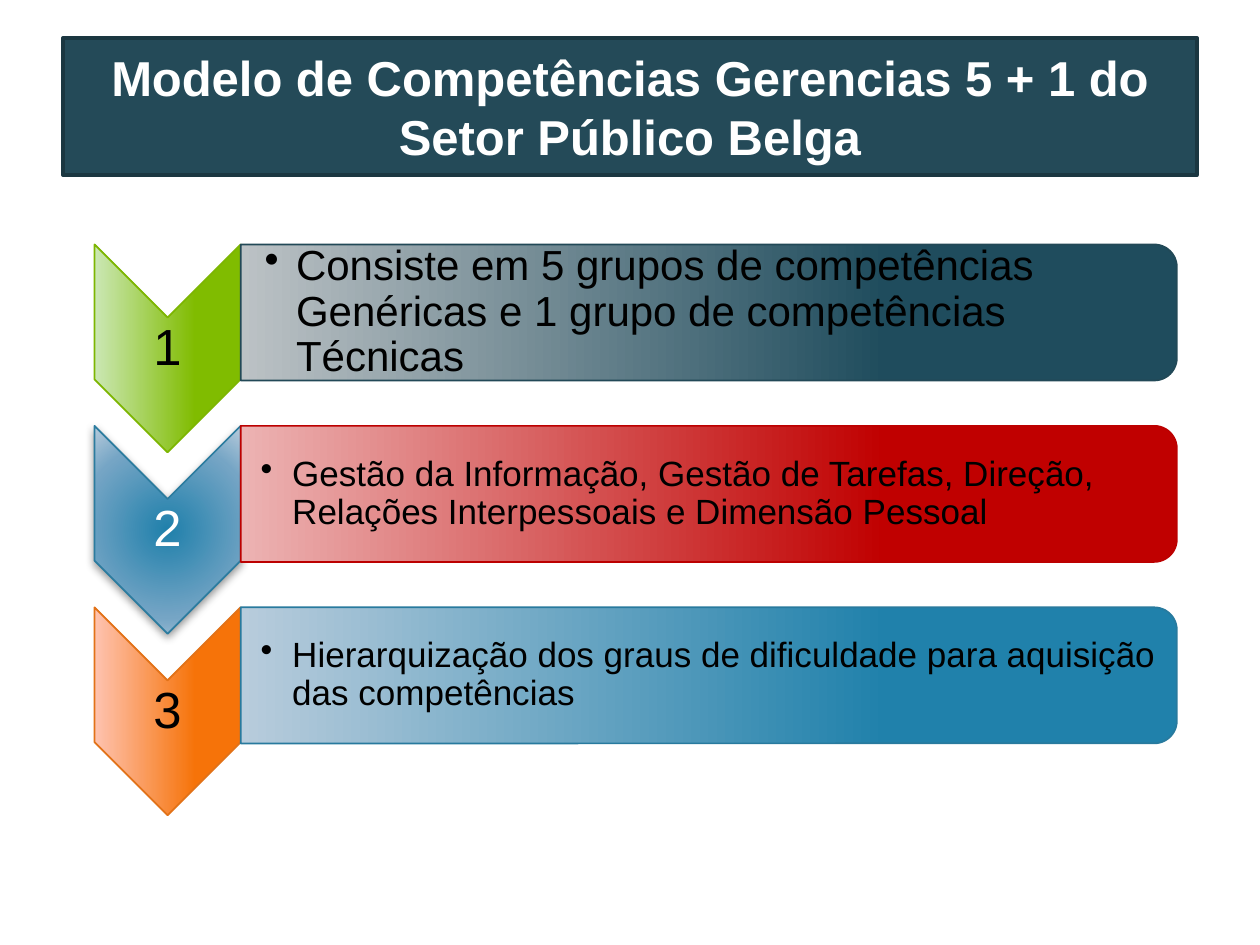
from dataclasses import dataclass

from lxml import etree
from pptx import Presentation
from pptx.dml.color import RGBColor
from pptx.enum.shapes import MSO_SHAPE
from pptx.enum.text import MSO_ANCHOR, PP_ALIGN
from pptx.oxml.ns import qn
from pptx.util import Inches, Pt

RECT = MSO_SHAPE.RECTANGLE
ARROW = MSO_SHAPE.CHEVRON
BAR = MSO_SHAPE.ROUND_2_SAME_RECTANGLE
MIDDLE = MSO_ANCHOR.MIDDLE
CENTER = PP_ALIGN.CENTER
LEFT = PP_ALIGN.LEFT


@dataclass(frozen=True)
class Theme:
    font: str = "Arial"
    head: int = 28
    mark: int = 29
    white: str = "FFFFFF"
    black: str = "000000"
    panel: str = "244A58"
    edge: str = "1B3741"


@dataclass(frozen=True)
class Grid:
    left: float = 0.75
    top: float = 1.94
    step: float = 1.44
    arrow: float = 1.16
    point: float = 1.65
    bar: float = 7.43
    high: float = 1.08


@dataclass(frozen=True)
class Step:
    text: str
    size: int
    inset: float
    ink: str
    arrow: tuple
    rim: str
    bar: tuple
    edge: str
    glow: bool = False


THEME = Theme()
GRID = Grid()
STEPS = [
    Step("Consiste em 5 grupos de competências Genéricas e 1 grupo de competências Técnicas",
         24, 0.19, THEME.black, ((31, "80BC00"), (100, "CBE7B4")), "7DB602",
         ((31, "1F4C5D"), (100, "BCC2C5")), "224957"),
    Step("Gestão da Informação, Gestão de Tarefas, Direção, "
         "Relações Interpessoais e Dimensão Pessoal",
         20, 0.16, THEME.white, ((0, "2080AB"), (69, "75A5C5"), (100, "B8CCDC")), "2C7C9F",
         ((31, "C00000"), (100, "ECB3B3")), "BC0000", True),
    Step("Hierarquização dos graus de dificuldade para aquisição das competências",
         20, 0.16, THEME.black, ((31, "F67309"), (100, "FEC3B0")), "E27218",
         ((31, "2081AB"), (100, "B8CCDC")), "287A9E"),
]


def node(parent, tag, **attrs):
    return etree.SubElement(parent, qn(tag), {k: str(v) for k, v in attrs.items()})


def shade(shape, stops, radial):
    shape.fill.gradient()
    grad = shape._element.spPr.find(qn("a:gradFill"))
    for child in list(grad):
        grad.remove(child)
    grad.set("rotWithShape", "1")
    row = node(grad, "a:gsLst")
    for place, color in stops:
        node(node(row, "a:gs", pos=place * 1000), "a:srgbClr", val=color)
    if radial:
        full = dict.fromkeys("ltrb", 100000)
        node(node(grad, "a:path", path="circle"), "a:fillToRect", **full)
    else:
        node(grad, "a:lin", ang=90 * 60000, scaled=0)


def cast(shape):
    effects = shape._element.spPr.find(qn("a:effectLst"))
    drop = node(effects, "a:outerShdw", blurRad=Pt(5), dist=Pt(2),
                dir=90 * 60000, rotWithShape=0)
    node(node(drop, "a:srgbClr", val=THEME.black), "a:alpha", val=40000)


def form(slide, kind, box, edge, width):
    shape = slide.shapes.add_shape(kind, *map(Inches, box))
    shape.shadow.inherit = False
    shape.line.color.rgb = RGBColor.from_string(edge)
    shape.line.width = Pt(width)
    return shape


def turned(slide, kind, box, stops, edge, glow=False):
    x, y, w, h = box
    shift = (w - h) / 2
    shape = form(slide, kind, (x + shift, y - shift, h, w), edge, 1)
    shape.rotation = 90
    shade(shape, stops, glow)
    if glow:
        cast(shape)


def write(shape, text, size, color, align=CENTER):
    frame = shape.text_frame
    frame.word_wrap = True
    frame.vertical_anchor = MIDDLE
    para = frame.paragraphs[0]
    para.text = text
    para.alignment = align
    para.font.name = THEME.font
    para.font.size = Pt(size)
    para.font.color.rgb = RGBColor.from_string(color)
    return para


def label(slide, box, text, size, color, inset=0.02, align=CENTER):
    shape = slide.shapes.add_textbox(*map(Inches, box))
    frame = shape.text_frame
    frame.margin_top = frame.margin_bottom = frame.margin_right = Inches(0.02)
    frame.margin_left = Inches(inset)
    para = write(shape, text, size, color, align)
    para.line_spacing = 0.9
    return para


def bullet(para):
    para.level = 1
    props = para._p.get_or_add_pPr()
    props.set("marL", str(Inches(0.25)))
    props.set("indent", str(Inches(-0.25)))
    mark = etree.Element(qn("a:buChar"), char="•")
    props.find(qn("a:defRPr")).addprevious(mark)


def title(slide, text):
    shape = form(slide, RECT, (0.5, 0.3, 9, 1.09), THEME.edge, 2)
    shape.fill.solid()
    shape.fill.fore_color.rgb = RGBColor.from_string(THEME.panel)
    write(shape, text, THEME.head, THEME.white).font.bold = True


def row(slide, index, step):
    g = GRID
    top = g.top + index * g.step
    side = g.left + g.arrow
    turned(slide, ARROW, (g.left, top, g.arrow, g.point), step.arrow, step.rim, step.glow)
    label(slide, (g.left, top + g.arrow / 2, g.arrow, 0.5),
          str(index + 1), THEME.mark, step.ink)
    turned(slide, BAR, (side, top, g.bar, g.high), step.bar, step.edge)
    bullet(label(slide, (side, top + 0.05, g.bar - 0.06, g.high - 0.1),
                 step.text, step.size, THEME.black, step.inset, LEFT))


def main():
    deck = Presentation()
    deck.slide_width, deck.slide_height = Inches(10), Inches(7.5)
    slide = deck.slides.add_slide(deck.slide_layouts[6])
    title(slide, "Modelo de Competências Gerencias 5 + 1 do Setor Público Belga")
    for index, step in enumerate(STEPS):
        row(slide, index, step)
    deck.save("out.pptx")


if __name__ == "__main__":
    main()
